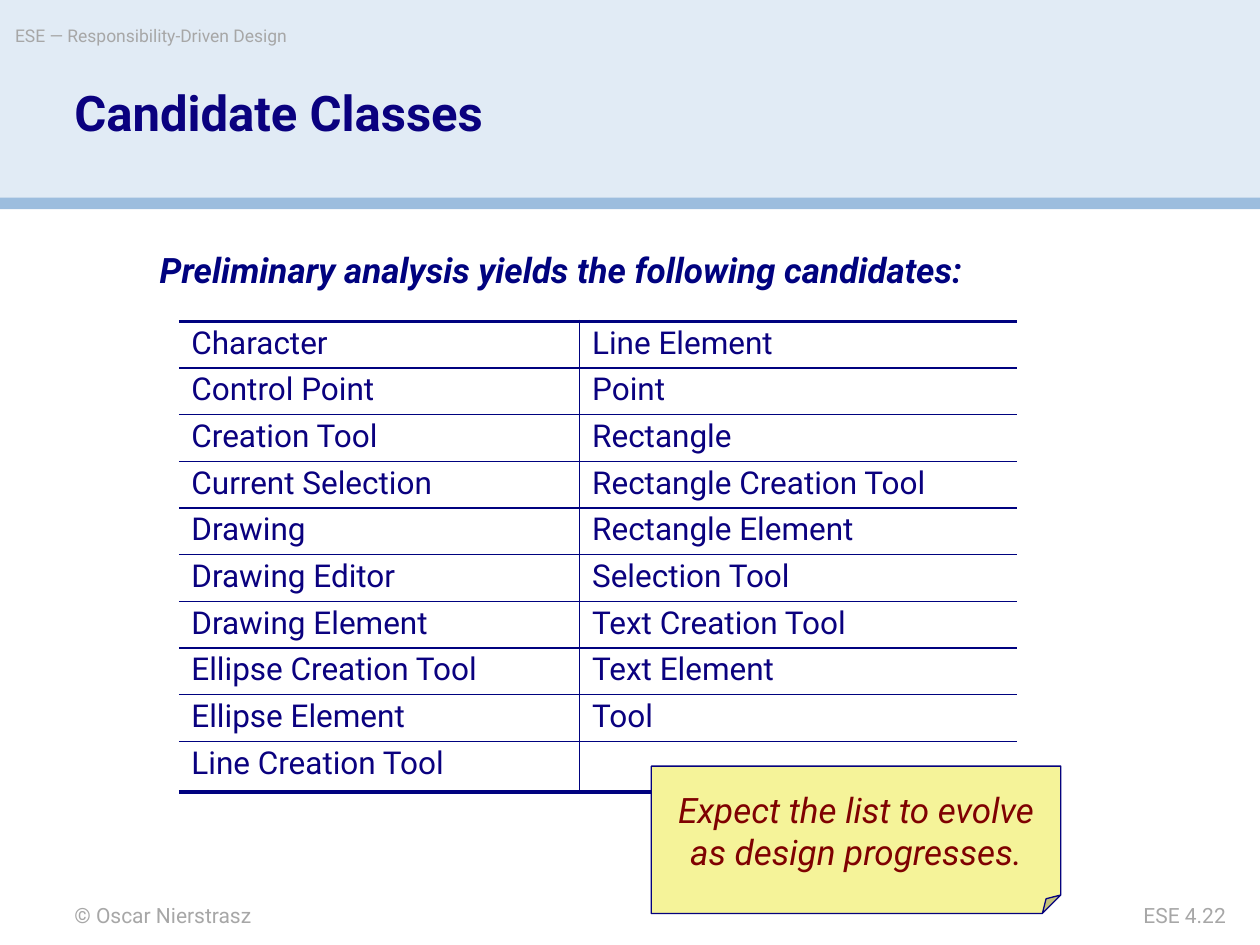
from lxml import etree
from pptx import Presentation
from pptx import util as u
from pptx.dml.color import RGBColor
from pptx.enum import shapes, text
from pptx.oxml import ns

FONT = "Roboto"
HEADER_BLUE = RGBColor(0xE1, 0xEB, 0xF5)
STRIPE_BLUE = RGBColor(0x9C, 0xBD, 0xDE)
GREY = RGBColor(0xA7, 0xA7, 0xA7)
NAVY = RGBColor(0x0A, 0x01, 0x7F)
DEEP_BLUE = RGBColor(0x00, 0x02, 0x7F)
NOTE_YELLOW = RGBColor(0xF5, 0xF3, 0x99)
NOTE_LINE = RGBColor(0x05, 0x02, 0x7D)
NOTE_RED = RGBColor(0x7F, 0x01, 0x01)

LEFT_CLASSES = [
    "Character", "Control Point", "Creation Tool", "Current Selection",
    "Drawing", "Drawing Editor", "Drawing Element", "Ellipse Creation Tool",
    "Ellipse Element", "Line Creation Tool",
]
RIGHT_CLASSES = [
    "Line Element", "Point", "Rectangle", "Rectangle Creation Tool",
    "Rectangle Element", "Selection Tool", "Text Creation Tool",
    "Text Element", "Tool", "",
]
COLUMN_WIDTHS = (229, 250)
ROW_HEIGHT = 26.2
LAST_ROW_HEIGHT = 28.2
THIN, THICK = 1, 2.25


def points(*lengths):
    return [u.Pt(length) for length in lengths]


def write(frame, words, size, color, bold=False, italic=False,
          align=text.PP_ALIGN.LEFT, spacing=None):
    frame.word_wrap = True
    paragraph = frame.paragraphs[0]
    paragraph.text = words
    paragraph.alignment = align
    paragraph.line_spacing = spacing
    font = paragraph.font
    font.name, font.size, font.color.rgb = FONT, u.Pt(size), color
    font.bold, font.italic = bold, italic


def add_label(slide, place, words, size, color, inset=(0, 0), **style):
    frame = slide.shapes.add_textbox(*points(*place)).text_frame
    frame.margin_left = frame.margin_right = u.Pt(inset[0])
    frame.margin_top = frame.margin_bottom = u.Pt(inset[1])
    write(frame, words, size, color, **style)


def add_band(slide, place, color):
    band = slide.shapes.add_shape(shapes.MSO_SHAPE.RECTANGLE, *points(*place))
    band.shadow.inherit = False
    band.fill.solid()
    band.fill.fore_color.rgb = color
    band.line.fill.background()


def set_borders(cell, widths):
    properties = cell._tc.get_or_add_tcPr()
    for position, (side, width) in enumerate(widths.items()):
        border = etree.Element(ns.qn(f"a:ln{side}"), w=str(u.Pt(width)))
        if width:
            fill = etree.SubElement(border, ns.qn("a:solidFill"))
            etree.SubElement(fill, ns.qn("a:srgbClr"), val=str(DEEP_BLUE))
        else:
            etree.SubElement(border, ns.qn("a:noFill"))
        properties.insert(position, border)


def add_class_table(slide, left, top):
    rows = list(zip(LEFT_CLASSES, RIGHT_CLASSES))
    last = len(rows) - 1
    height = last * ROW_HEIGHT + LAST_ROW_HEIGHT
    table = slide.shapes.add_table(
        len(rows), 2, *points(left, top, sum(COLUMN_WIDTHS), height)).table
    table.first_row = table.horz_banding = False
    for column, width in zip(table.columns, COLUMN_WIDTHS):
        column.width = u.Pt(width)
    for r, names in enumerate(rows):
        table.rows[r].height = u.Pt(LAST_ROW_HEIGHT if r == last else ROW_HEIGHT)
        for c, name in enumerate(names):
            cell = table.cell(r, c)
            cell.fill.background()
            set_borders(cell, {
                "L": THIN if c == 1 else 0,
                "R": THIN if c == 0 else 0,
                "T": THICK if r == 0 else THIN,
                "B": THICK if r == last else THIN,
            })
            if name:
                write(cell.text_frame, name, 18, NAVY, spacing=0.9)


def add_note(slide, place, words):
    note = slide.shapes.add_shape(shapes.MSO_SHAPE.FOLDED_CORNER, *points(*place))
    fold = note._element.spPr.find(ns.qn("a:prstGeom")).get_or_add_avLst()
    etree.SubElement(fold, ns.qn("a:gd"), name="adj", fmla="val 12500")
    note.shadow.inherit = False
    note.fill.solid()
    note.fill.fore_color.rgb = NOTE_YELLOW
    note.line.color.rgb = NOTE_LINE
    note.line.width = u.Pt(0.75)
    note.text_frame.vertical_anchor = text.MSO_ANCHOR.MIDDLE
    write(note.text_frame, words, 20, NOTE_RED, italic=True,
          align=text.PP_ALIGN.CENTER)


def main():
    deck = Presentation()
    deck.slide_width, deck.slide_height = points(720, 540)
    slide = deck.slides.add_slide(deck.slide_layouts[6])
    add_band(slide, (0, 0, 720, 113.8), HEADER_BLUE)
    add_band(slide, (0, 113, 720, 6.5), STRIPE_BLUE)
    add_label(slide, (42.5, 515.5, 300, 14.4), "© Oscar Nierstrasz", 12, GREY)
    add_label(slide, (8.6, 14.4, 425, 20),
              "ESE — Responsibility-Driven Design", 10, GREY)
    add_label(slide, (594, 516, 106.5, 14.4), "ESE 4.22", 12, GREY,
              align=text.PP_ALIGN.RIGHT)
    add_label(slide, (42.5, 51, 521, 64), "Candidate Classes", 28, NAVY,
              bold=True, spacing=0.9)
    add_class_table(slide, 102.2, 183.6)
    add_label(slide, (84.2, 138.2, 515.5, 31),
              "Preliminary analysis yields the following candidates:",
              20, DEEP_BLUE, inset=(7.2, 3.6), bold=True, italic=True)
    add_note(slide, (372.2, 437.8, 234, 84.2),
             "Expect the list to evolve as design progresses.")
    deck.save("out.pptx")


if __name__ == "__main__":
    main()
